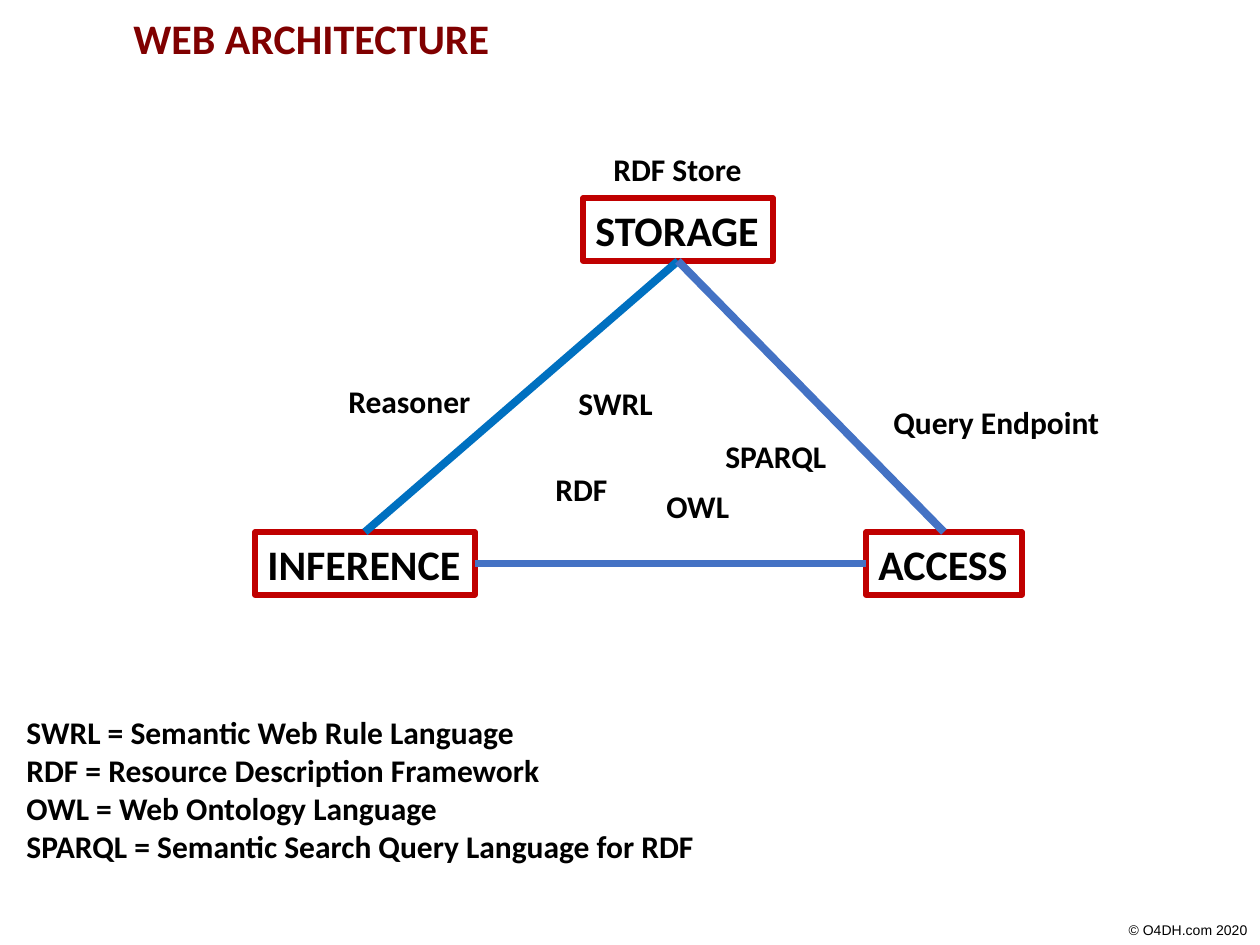
from lxml.etree import SubElement
from pptx import Presentation
from pptx.dml.color import RGBColor
from pptx.enum.shapes import MSO_CONNECTOR, MSO_SHAPE
from pptx.enum.text import MSO_ANCHOR, MSO_AUTO_SIZE, PP_ALIGN
from pptx.oxml.ns import qn
from pptx.util import Emu, Pt

PIXELS_PER_INCH = 126
TOP, LEFT, BOTTOM, RIGHT = 0, 1, 2, 3

HEADING = {"name": "Calibri", "size": Pt(24), "bold": True}
LABEL = {"name": "Calibri", "size": Pt(18), "bold": True}
FOOTER = {"name": "Arial", "size": Pt(8), "bold": False}

BOXES = {
    "INFERENCE": (255, 532, 220, 63),
    "ACCESS": (866, 532, 156, 63),
    "STORAGE": (583, 198, 190, 63),
}
EDGES = [
    ("STORAGE", BOTTOM, "INFERENCE", TOP, "0070C0"),
    ("INFERENCE", RIGHT, "ACCESS", LEFT, "4472C4"),
    ("STORAGE", BOTTOM, "ACCESS", TOP, "4472C4"),
]
LABELS = [
    ("RDF", 543, 464, 78),
    ("Reasoner", 336, 376, 149),
    ("OWL", 654, 481, 89),
    ("Query Endpoint", 881, 397, 233),
    ("SWRL", 566, 378, 101),
    ("SPARQL", 713, 431, 127),
    ("RDF Store", 601, 144, 155),
]
GLOSSARY = [
    "SWRL = Semantic Web Rule Language",
    "RDF = Resource Description Framework",
    "OWL = Web Ontology Language",
    "SPARQL = Semantic Search Query Language for RDF",
]


def px(length):
    return Emu(round(length * 914400 / PIXELS_PER_INCH))


def color(value):
    return RGBColor.from_string(value)


def write(shape, lines, font_format, font_color="000000", wrap=False,
          alignment=PP_ALIGN.LEFT):
    frame = shape.text_frame
    frame.word_wrap = wrap
    frame.auto_size = MSO_AUTO_SIZE.SHAPE_TO_FIT_TEXT
    frame.vertical_anchor = MSO_ANCHOR.TOP
    for index, line in enumerate(lines):
        paragraph = frame.add_paragraph() if index else frame.paragraphs[0]
        paragraph.alignment = alignment
        run = paragraph.add_run()
        run.text = line
        for name, value in font_format.items():
            setattr(run.font, name, value)
        run.font.color.rgb = color(font_color)


def add_text(slide, lines, bounds, font_format, **options):
    shape = slide.shapes.add_textbox(*map(px, bounds))
    write(shape, lines, font_format, **options)


def add_box(slide, text, bounds):
    shape = slide.shapes.add_shape(MSO_SHAPE.RECTANGLE, *map(px, bounds))
    shape.shadow.inherit = False
    shape.fill.background()
    shape.line.color.rgb = color("C00000")
    shape.line.width = Pt(3)
    write(shape, [text], HEADING)
    return shape


def add_edge(slide, start, start_side, end, end_side, line_color):
    connector = slide.shapes.add_connector(MSO_CONNECTOR.STRAIGHT, 0, 0, 0, 0)
    connector.begin_connect(start, start_side)
    connector.end_connect(end, end_side)
    connector.line.color.rgb = color(line_color)
    connector.line.width = Pt(4.5)
    SubElement(connector._element.spPr, qn("a:effectLst"))


def main():
    presentation = Presentation()
    presentation.slide_width = px(1260)
    presentation.slide_height = px(945)
    slide = presentation.slides.add_slide(presentation.slide_layouts[6])

    # Copyright line
    add_text(slide, ["© Ο4DH.com 2020"], (651, 915, 609, 30), FOOTER,
             wrap=True, alignment=PP_ALIGN.RIGHT)

    # Triangle of components
    boxes = {text: add_box(slide, text, bounds)
             for text, bounds in BOXES.items()}
    for start, start_side, end, end_side, line_color in EDGES:
        add_edge(slide, boxes[start], start_side, boxes[end], end_side,
                 line_color)

    # Technologies around and inside the triangle
    for text, left, top, width in LABELS:
        add_text(slide, [text], (left, top, width, 50), LABEL)

    # Title and glossary
    add_text(slide, ["WEB ARCHITECTURE"], (121, 6, 386, 63), HEADING,
             font_color="800000")
    add_text(slide, GLOSSARY, (14, 707, 699, 165), LABEL)

    presentation.save("out.pptx")


if __name__ == "__main__":
    main()
